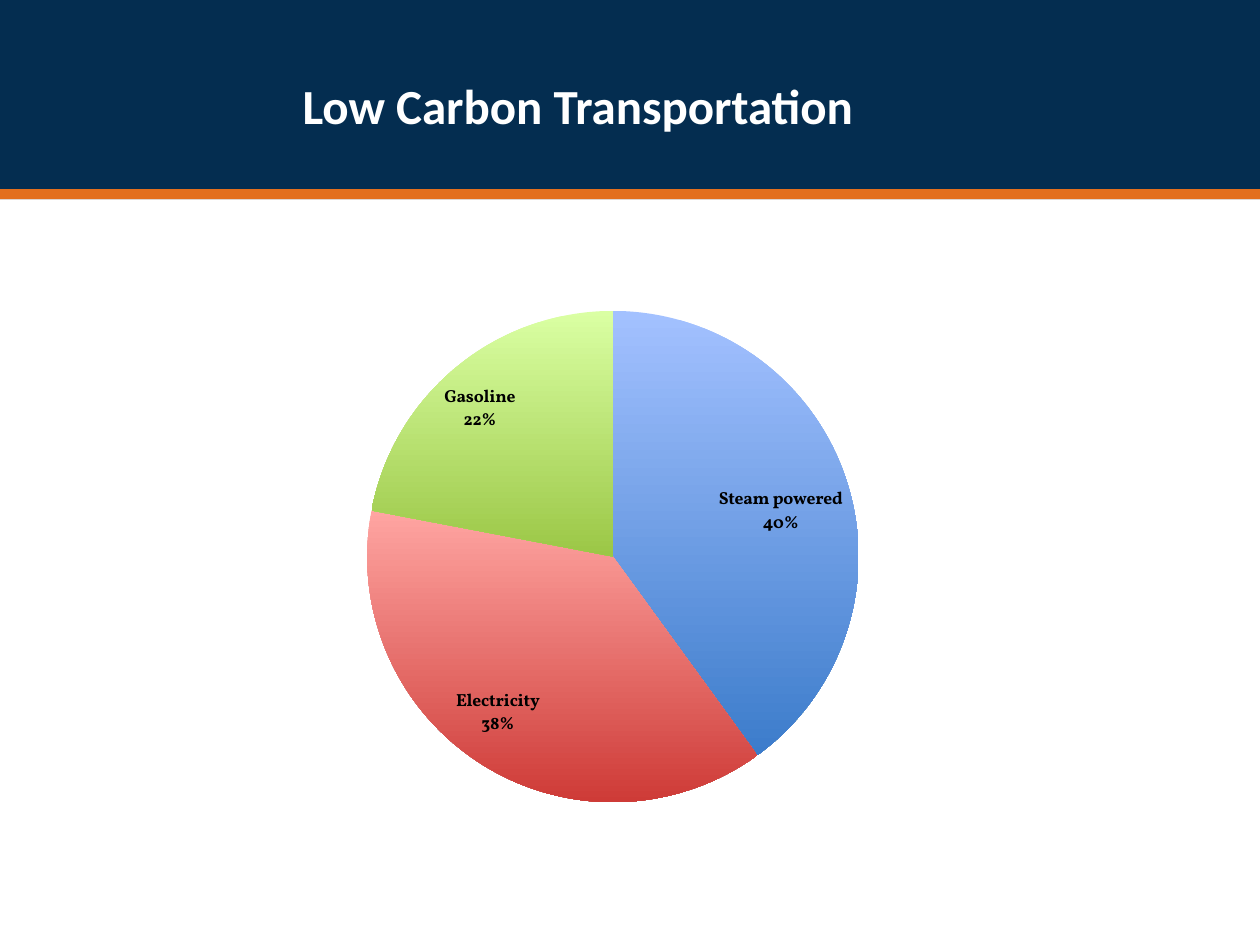
from lxml import etree
from pptx import Presentation
from pptx.chart.data import CategoryChartData
from pptx.dml.color import RGBColor
from pptx.enum.chart import XL_CHART_TYPE, XL_LABEL_POSITION
from pptx.enum.shapes import MSO_SHAPE
from pptx.enum.text import MSO_ANCHOR, PP_ALIGN
from pptx.oxml import parse_xml
from pptx.oxml.ns import nsdecls, qn
from pptx.util import Inches, Pt

TITLE = "Low Carbon Transportation"
# category, percent, top colour, bottom colour
SLICES = [
    ("Steam powered", 40, "A3C1FF", "3C7CCB"),
    ("Electricity", 38, "FFA5A2", "CE3B37"),
    ("Gasoline", 22, "DAFFA3", "9BC746"),
]
BANDS = [(0, 1.58, "042D50"), (1.5, 0.08, "E36F1E")]  # top, height, fill
WIDE, HIGH = 6.57, 4.18  # chart frame
PIE = 3.9  # pie diameter


def color(code):
    return RGBColor.from_string(code)


def style(font, name, size, code):
    font.name, font.size, font.bold = name, Pt(size), True
    font.color.rgb = color(code)


def add_band(slide, top, height, code):
    band = slide.shapes.add_shape(
        MSO_SHAPE.RECTANGLE, 0, Inches(top), Inches(10), Inches(height))
    band.shadow.inherit = False
    band.fill.solid()
    band.fill.fore_color.rgb = color(code)
    band.line.fill.background()


def add_title(slide):
    box = slide.shapes.add_textbox(
        Inches(2), Inches(0.25), Inches(5.17), Inches(1.16))
    frame = box.text_frame
    frame.word_wrap = True
    frame.vertical_anchor = MSO_ANCHOR.MIDDLE
    para = frame.paragraphs[0]
    para.text = TITLE
    para.alignment = PP_ALIGN.CENTER
    style(para.font, "Calibri", 28, "FFFFFF")


def center_plot(chart):
    """Give the pie a fixed size in the middle of the chart frame."""
    w, h = round(PIE / WIDE, 3), round(PIE / HIGH, 3)
    sizes = {"x": (1 - w) / 2, "y": (1 - h) / 2, "w": w, "h": h}
    parts = "".join(f'<c:{k} val="{v:.3f}"/>' for k, v in sizes.items())
    area = chart._chartSpace.chart.plotArea
    for old in area.findall(qn("c:layout")):
        area.remove(old)
    area.insert(0, parse_xml(
        f'<c:layout {nsdecls("c")}><c:manualLayout>'
        '<c:layoutTarget val="inner"/><c:xMode val="edge"/>'
        f'<c:yMode val="edge"/>{parts}</c:manualLayout></c:layout>'))


def add_pie(slide):
    data = CategoryChartData()
    data.categories = [row[0] for row in SLICES]
    data.add_series("Series 1", [row[1] for row in SLICES])
    chart = slide.shapes.add_chart(
        XL_CHART_TYPE.PIE, Inches(1.58), Inches(2.33),
        Inches(WIDE), Inches(HIGH), data).chart
    chart.has_legend = chart.has_title = False
    style(chart.font, "Vollkorn", 10, "000000")
    center_plot(chart)

    plot = chart.plots[0]
    plot.vary_by_categories = True
    for i, (_, _, *ends) in enumerate(SLICES):
        form = plot.series[0].points[i].format
        form.line.fill.background()
        form.fill.gradient()
        form.fill.gradient_angle = 270
        for stop, code in zip(form.fill.gradient_stops, ends):
            stop.color.rgb = color(code)

    plot.has_data_labels = True
    labels = plot.data_labels
    labels.show_value = False
    labels.show_category_name = labels.show_percentage = True
    labels.number_format, labels.number_format_is_linked = "0%", False
    labels.position = XL_LABEL_POSITION.BEST_FIT
    style(labels.font, "Vollkorn", 10, "000000")
    mark = etree.Element(qn("c:separator"))
    mark.text = "\n"
    labels._element.find(qn("c:showBubbleSize")).addnext(mark)


def main():
    deck = Presentation()
    deck.slide_width, deck.slide_height = Inches(10), Inches(7.5)
    slide = deck.slides.add_slide(deck.slide_layouts[6])
    for band in BANDS:
        add_band(slide, *band)
    add_title(slide)
    add_pie(slide)
    deck.save("out.pptx")


if __name__ == "__main__":
    main()
